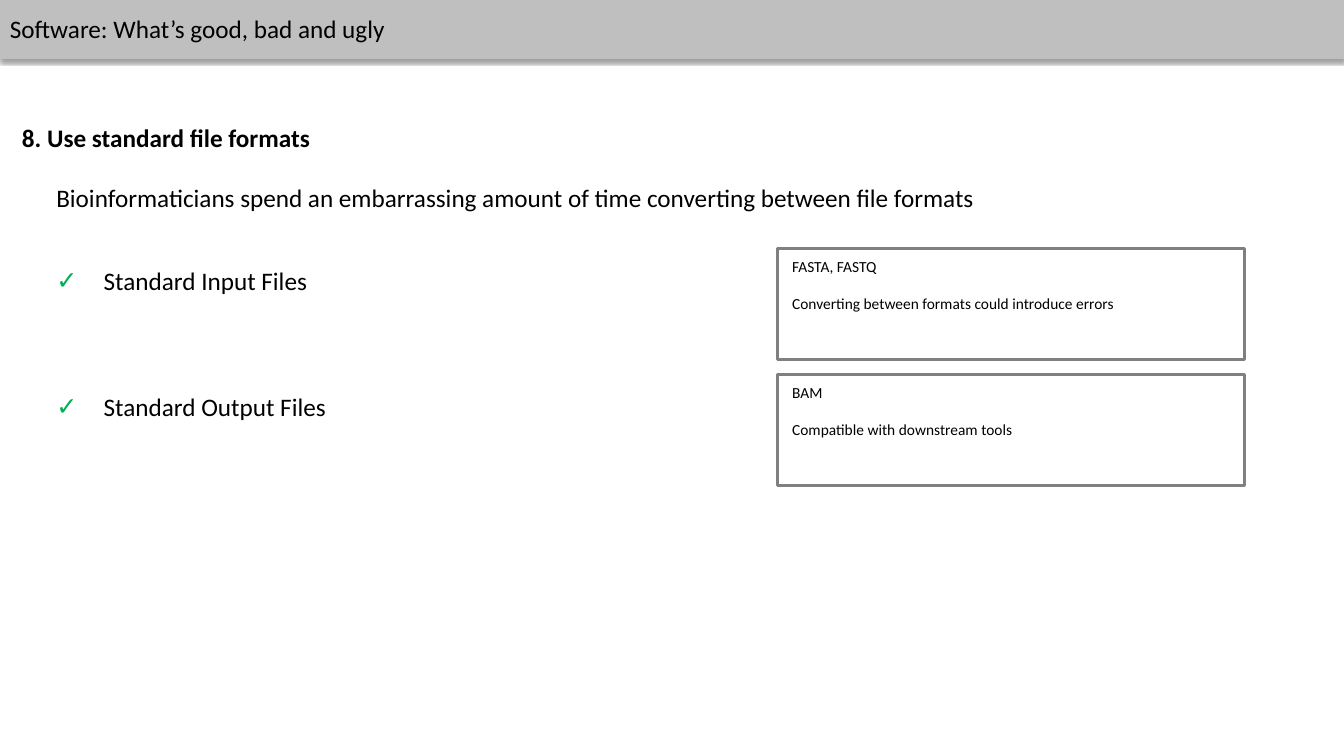
"""Builds the slide on standard file formats."""
from lxml import etree
from pptx import Presentation
from pptx import util as u
from pptx.dml.color import RGBColor
from pptx.enum import shapes, text
from pptx.oxml.ns import qn

TITLE = "Software: What’s good, bad and ugly"
HEADING = "8. Use standard file formats"
INTRO = "Bioinformaticians spend an embarrassing amount of time converting between file formats"
CHECKS = [
    ("Standard Input Files", 161.3,
     ["FASTA, FASTQ", "Converting between formats could introduce errors"]),
    ("Standard Output Files", 175,
     ["BAM", "Compatible with downstream tools"]),
]
THEME = {
    "font": "Calibri", "body": 18, "note": 11, "note_gap": 13.2,
    "ink": "000000", "tick": "00B050", "bar": "BFBFBF", "frame": "808080",
}
SLIDE_W, SLIDE_H = 960, 540
LINE_H = 28.8
INDENT, LABEL_X, NOTE_X = 33.1, 67, 555.1
FIRST_ROW, ROW_PITCH = 177.8, 90


def points(*lengths):
    return [u.Pt(length) for length in lengths]


def add_rect(slide, box, line, width, fill=None):
    rect = slide.shapes.add_shape(shapes.MSO_SHAPE.RECTANGLE, *points(*box))
    rect.shadow.inherit = False
    if fill:
        rect.fill.solid()
        rect.fill.fore_color.rgb = RGBColor.from_string(fill)
    else:
        rect.fill.background()
    rect.line.color.rgb = RGBColor.from_string(line)
    rect.line.width = u.Pt(width)
    return rect


def write(holder, lines, size="body", color="ink", bold=False, wrap=False):
    frame = holder.text_frame
    frame.text = "\n".join(lines)
    frame.word_wrap = wrap
    frame.auto_size = text.MSO_AUTO_SIZE.SHAPE_TO_FIT_TEXT
    for index, paragraph in enumerate(frame.paragraphs):
        paragraph.alignment = text.PP_ALIGN.LEFT
        if index:
            paragraph.space_before = u.Pt(THEME["note_gap"])
        for run in paragraph.runs:
            run.font.name = THEME["font"]
            run.font.size = u.Pt(THEME[size])
            run.font.bold = bold
            run.font.color.rgb = RGBColor.from_string(THEME[color])


def add_label(slide, box, lines, **style):
    write(slide.shapes.add_textbox(*points(*box)), lines, **style)


def cast_shadow(bar):
    effects = bar._element.spPr.find(qn("a:effectLst"))
    shadow = etree.SubElement(
        effects, qn("a:outerShdw"), blurRad=str(u.Pt(3.1)), dist=str(u.Pt(1.6)),
        dir="5400000", rotWithShape="0")
    color = etree.SubElement(shadow, qn("a:srgbClr"), val=THEME["ink"])
    etree.SubElement(color, qn("a:alpha"), val="38000")


def main():
    deck = Presentation()
    deck.slide_width, deck.slide_height = points(SLIDE_W, SLIDE_H)
    slide = deck.slides.add_slide(deck.slide_layouts[6])

    add_label(slide, (8.6, 83.5, 222.5, LINE_H), [HEADING], bold=True)
    for row, (label, label_w, notes) in enumerate(CHECKS):
        top = FIRST_ROW + row * ROW_PITCH
        add_label(slide, (LABEL_X, top + 8, label_w, LINE_H), [label])
        add_label(slide, (INDENT, top + 7.2, 32.4, LINE_H), ["✓"], color="tick")
        add_rect(slide, (NOTE_X, top, 334, 79.2), THEME["frame"], 2)
        add_label(slide, (NOTE_X + 3.6, top + 2.2, 303.8, 47.5), notes,
                  size="note", wrap=True)

    bar = add_rect(slide, (0, 0, SLIDE_W, 41.8), THEME["bar"], 0.75, THEME["bar"])
    cast_shadow(bar)
    title = add_rect(slide, (0, 5.8, 285.8, LINE_H), THEME["bar"], 0.75)
    write(title, [TITLE])
    add_label(slide, (INDENT, 126.7, 678.2, LINE_H), [INTRO])

    deck.save("out.pptx")


if __name__ == "__main__":
    main()
